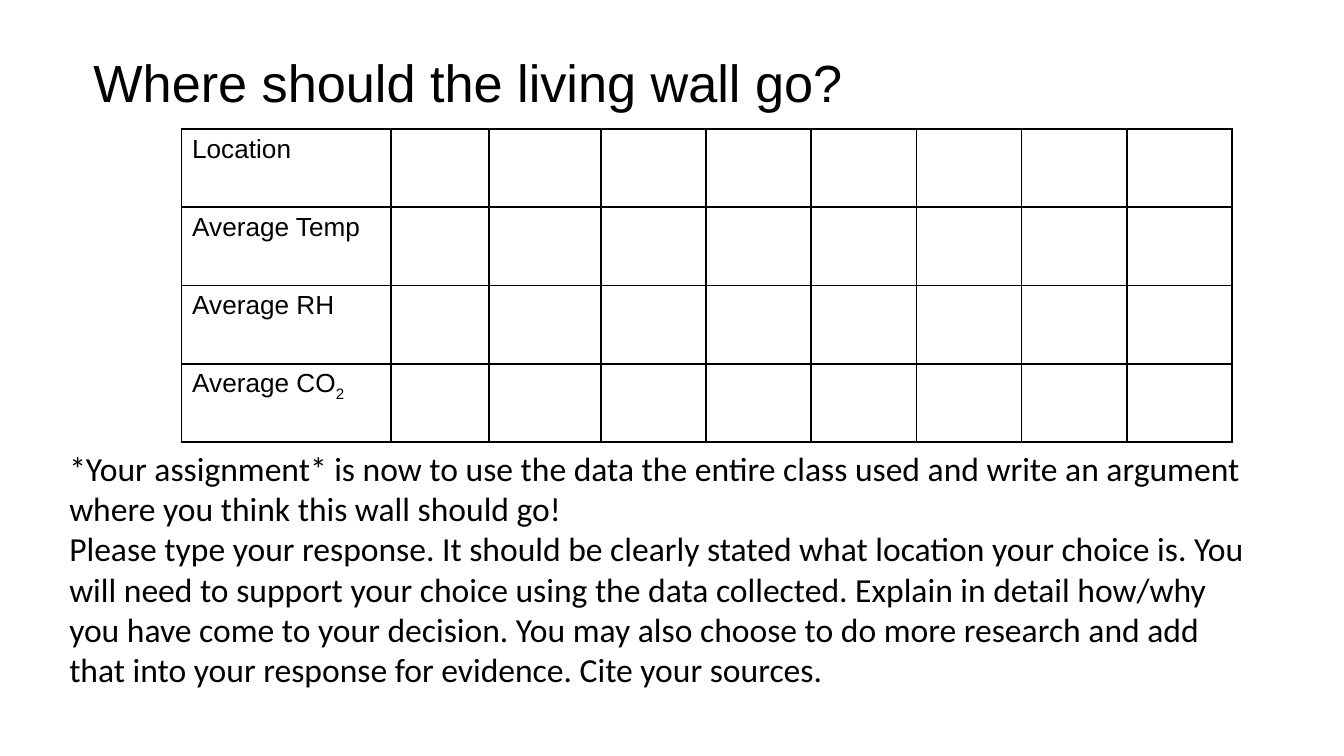
import pptx
import pptx.dml.color
import pptx.enum.text
import pptx.oxml
import pptx.oxml.ns
import pptx.util

Inches = pptx.util.Inches
Pt = pptx.util.Pt
BLACK = pptx.dml.color.RGBColor(0, 0, 0)
WHITE = pptx.dml.color.RGBColor(255, 255, 255)

TABLE_BOX = (1.35, 0.96, 7.82, 2.33)
FIRST_COLS = [1.56, 0.73, 0.83]
EQUAL_COLS = 6
ROW_LABELS = [
    [("Location", 0)],
    [("Average Temp", 0)],
    [("Average RH", 0)],
    [("Average CO", 0), ("2", -25000)],
]
ASSIGNMENT = [
    "*Your assignment* is now to use the data the entire class used and write "
    "an argument where you think this wall should go!",
    "Please type your response. It should be clearly stated what location your "
    "choice is. You will need to support your choice using the data collected. "
    "Explain in detail how/why you have come to your decision. You may also "
    "choose to do more research and add that into your response for evidence. "
    "Cite your sources.",
]


def set_attrs(obj, **values):
    for name, value in values.items():
        setattr(obj, name, value)


def add_run(p, text, font, size):
    r = p.add_run()
    r.text = text
    set_attrs(r.font, name=font, size=Pt(size))
    r.font.color.rgb = BLACK
    return r


def set_frame(tf, anchor):
    set_attrs(tf, word_wrap=True, vertical_anchor=anchor,
              margin_left=Pt(5.4), margin_right=Pt(5.4),
              margin_top=Inches(0.04), margin_bottom=Inches(0.04))


def add_title(s, text):
    sp = s.shapes.title
    set_attrs(sp, left=Inches(0.62), top=Inches(0.09),
              width=Inches(8.62), height=Inches(1.09))
    tf = sp.text_frame
    set_frame(tf, pptx.enum.text.MSO_ANCHOR.MIDDLE)
    p = tf.paragraphs[0]
    set_attrs(p, alignment=pptx.enum.text.PP_ALIGN.LEFT, line_spacing=0.9)
    add_run(p, text, "Arial", 28)


def format_cell(cell):
    set_attrs(cell, margin_left=Inches(0.08), margin_right=Inches(0.08),
              margin_top=Inches(0.04), margin_bottom=Inches(0.04))
    tcPr = cell._tc.get_or_add_tcPr()
    for side in ("lnL", "lnR", "lnT", "lnB"):
        tcPr.append(pptx.oxml.parse_xml(
            f'<a:{side} {pptx.oxml.ns.nsdecls("a")} w="{Pt(1)}">'
            f'<a:solidFill><a:srgbClr val="{BLACK}"/></a:solidFill></a:{side}>'))
    cell.fill.solid()
    cell.fill.fore_color.rgb = WHITE


def add_data_table(s):
    width, height = TABLE_BOX[2:]
    equal = (width - sum(FIRST_COLS)) / EQUAL_COLS
    widths = FIRST_COLS + [equal] * EQUAL_COLS
    table = s.shapes.add_table(len(ROW_LABELS), len(widths),
                               *map(Inches, TABLE_BOX)).table
    set_attrs(table, first_row=False, horz_banding=False)
    for column, w in zip(table.columns, widths):
        column.width = Inches(w)
    for row, label in zip(table.rows, ROW_LABELS):
        row.height = Inches(height / len(ROW_LABELS))
        for cell in row.cells:
            format_cell(cell)
        p = row.cells[0].text_frame.paragraphs[0]
        for text, baseline in label:
            r = add_run(p, text, "Arial", 14)
            if baseline:
                r._r.get_or_add_rPr().set("baseline", str(baseline))


def add_assignment(s, paragraphs):
    tf = s.shapes.add_textbox(Inches(0.44), Inches(3.29),
                              Inches(8.99), Inches(1.89)).text_frame
    set_frame(tf, pptx.enum.text.MSO_ANCHOR.TOP)
    tf.auto_size = pptx.enum.text.MSO_AUTO_SIZE.SHAPE_TO_FIT_TEXT
    for i, text in enumerate(paragraphs):
        p = tf.add_paragraph() if i else tf.paragraphs[0]
        add_run(p, text, "Calibri", 18)


def main():
    prs = pptx.Presentation()
    width = Inches(10)
    set_attrs(prs, slide_width=width, slide_height=width * 9 // 16)
    s = prs.slides.add_slide(prs.slide_layouts[5])
    add_title(s, "Where should the living wall go?")
    add_data_table(s)
    add_assignment(s, ASSIGNMENT)
    prs.save("out.pptx")


if __name__ == "__main__":
    main()
